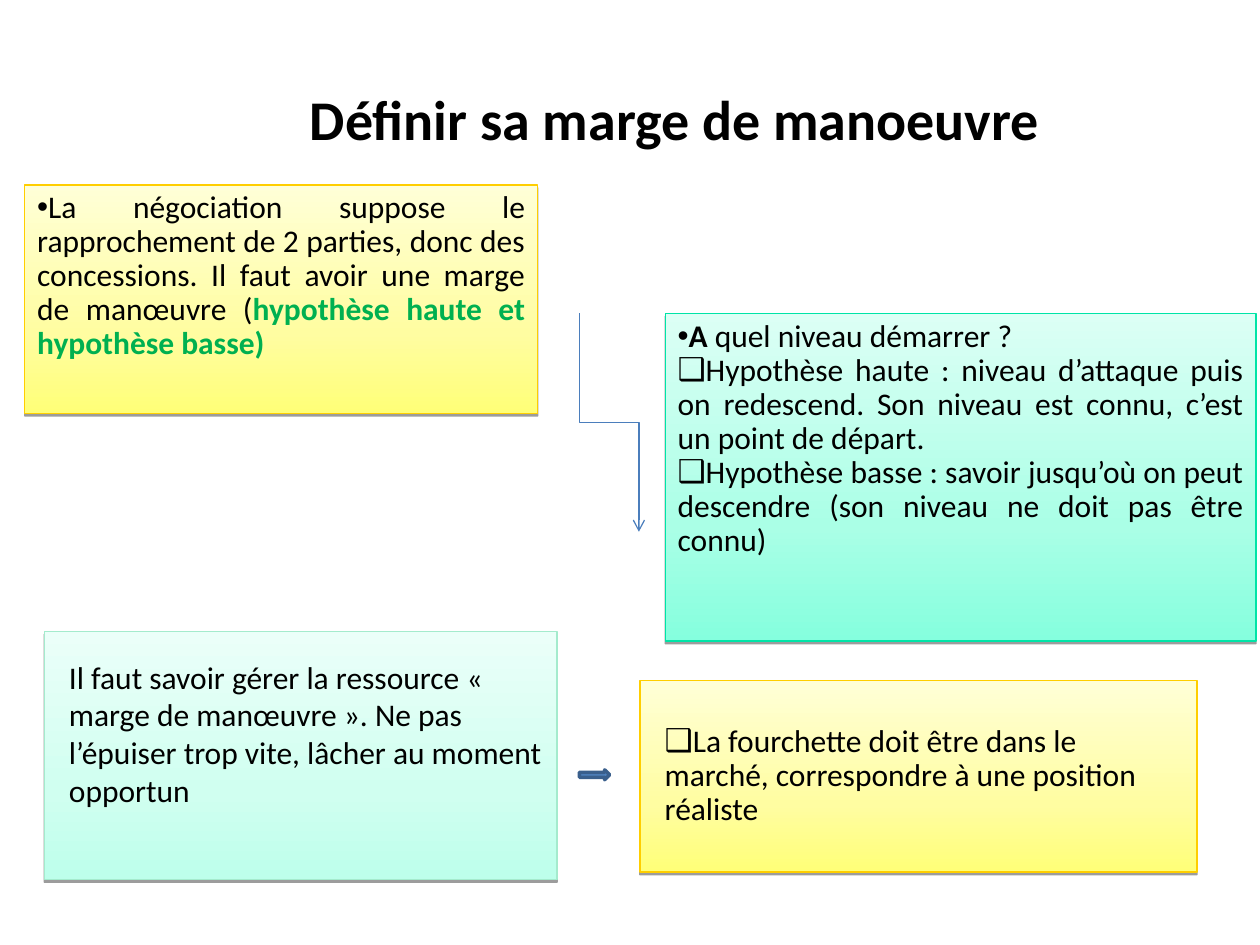
import pptx
import pptx.util
import pptx.dml.color
import pptx.enum.shapes
import pptx.enum.text
import pptx.oxml
import pptx.oxml.ns
from copy import deepcopy
from lxml import etree

Cm, Pt = pptx.util.Cm, pptx.util.Pt
RGB = pptx.dml.color.RGBColor
ALIGN = pptx.enum.text.PP_ALIGN
ANCHOR = pptx.enum.text.MSO_ANCHOR
SHAPE = pptx.enum.shapes.MSO_SHAPE
qn = pptx.oxml.ns.qn

BLACK = RGB(0x00, 0x00, 0x00)
GREEN = RGB(0x00, 0xB0, 0x50)
BLUE = RGB(0x4F, 0x81, 0xBD)
DARK_BLUE = RGB(0x3A, 0x5F, 0x8C)
LINE_BLUE = RGB(0x4B, 0x7E, 0xBC)

# Each theme: gradient from top to bottom, then outline
STOPS = (0, 0.65, 1)
YELLOW = ((RGB(0xFF, 0xFF, 0xD7), RGB(0xFF, 0xFD, 0xA1), RGB(0xFF, 0xFF, 0x78)),
          RGB(0xFF, 0xCE, 0x00))
MINT = ((RGB(0xEB, 0xFF, 0xF9), RGB(0xD0, 0xFF, 0xF0), RGB(0xBD, 0xFF, 0xEB)),
        RGB(0xA4, 0xEB, 0xCD))
AQUA = ((RGB(0xDC, 0xFF, 0xF5), RGB(0xAA, 0xFF, 0xE6), RGB(0x85, 0xFF, 0xDE)),
        RGB(0x00, 0xE4, 0xA7))
SHADOW = ('<a:effectLst xmlns:a="http://schemas.openxmlformats.org/drawingml/2006/main">'
          '<a:outerShdw blurRad="0" dist="20000" dir="5400000" rotWithShape="0">'
          '<a:srgbClr val="000000"><a:alpha val="38000"/></a:srgbClr>'
          '</a:outerShdw></a:effectLst>')


def apply(target, values):
    for name, value in values.items():
        setattr(target, name, value)


class Board:
    font = {"name": "Calibri", "size": Pt(18), "bold": False}

    def __init__(self, slide):
        self.slide = slide

    def place(self, shape, left, top, width, height):
        apply(shape, {"left": Cm(left), "top": Cm(top),
                      "width": Cm(width), "height": Cm(height)})

    def add_runs(self, paragraph, runs, **font):
        for text, changes in runs:
            run = paragraph.add_run()
            run.text = text
            values = {**self.font, **font, **changes}
            run.font.color.rgb = values.pop("color", BLACK)
            apply(run.font, values)

    def title(self, text, *box):
        title = self.slide.shapes.title
        self.place(title, *box)
        apply(title.text_frame, {"auto_size": pptx.enum.text.MSO_AUTO_SIZE.NONE,
                                 "vertical_anchor": ANCHOR.MIDDLE})
        paragraph = title.text_frame.paragraphs[0]
        paragraph.alignment = ALIGN.CENTER
        self.add_runs(paragraph, [(text, {})], size=Pt(32), bold=True)

    def panel(self, index, box, theme, paragraphs, spacing=0.9,
              align=ALIGN.LEFT, anchor=ANCHOR.TOP, indent=0.25, bottom=0.13):
        panel = self.slide.placeholders[index]
        self.place(panel, *box)
        colors, outline = theme

        # Gradient, outline and shadow
        panel.fill.gradient()
        panel.fill.gradient_angle = 270
        first = panel._element.spPr.find(".//" + qn("a:gs"))
        first.addnext(deepcopy(first))
        for stop, position, color in zip(panel.fill.gradient_stops, STOPS, colors):
            stop.position = position
            stop.color.rgb = color
        panel.line.color.rgb = outline
        panel.line.width = Pt(0.75)
        panel._element.spPr.append(pptx.oxml.parse_xml(SHADOW))

        # Text
        frame = panel.text_frame
        apply(frame, {"word_wrap": True, "vertical_anchor": anchor,
                      "auto_size": pptx.enum.text.MSO_AUTO_SIZE.NONE,
                      "margin_left": Cm(indent), "margin_right": Cm(0.25),
                      "margin_top": Cm(0.13), "margin_bottom": Cm(bottom)})
        for number, (bullet, runs) in enumerate(paragraphs):
            paragraph = frame.add_paragraph() if number else frame.paragraphs[0]
            apply(paragraph, {"alignment": align, "line_spacing": spacing,
                              "space_before": Pt(0)})
            properties = paragraph._p.get_or_add_pPr()
            properties.set("marL", "0")
            properties.set("indent", "0")
            if bullet:
                etree.SubElement(properties, qn("a:buFont")).set("typeface", "Arial")
                etree.SubElement(properties, qn("a:buChar")).set("char", bullet)
            else:
                etree.SubElement(properties, qn("a:buNone"))
            self.add_runs(paragraph, runs)

    def elbow(self, left, top, width, height):
        """Bent arrow that leaves downwards: drawn lying, then turned upright."""
        x, y = left + (width - height) / 2, top + (height - width) / 2
        elbow = self.slide.shapes.add_connector(
            pptx.enum.shapes.MSO_CONNECTOR.ELBOW,
            Cm(x + height), Cm(y), Cm(x), Cm(y + width))
        elbow.line.color.rgb = LINE_BLUE
        elbow.line.width = Pt(0.75)
        properties = elbow._element.spPr
        properties.find(qn("a:xfrm")).set("rot", "16200000")
        etree.SubElement(properties.find(qn("a:ln")), qn("a:tailEnd")).set("type", "arrow")
        etree.SubElement(properties, qn("a:effectLst"))

    def block_arrow(self, *box):
        arrow = self.slide.shapes.add_shape(SHAPE.RIGHT_ARROW, *map(Cm, box))
        arrow.shadow.inherit = False
        arrow.fill.solid()
        arrow.fill.fore_color.rgb = BLUE
        arrow.line.color.rgb = DARK_BLUE
        arrow.line.width = Pt(2)


def main():
    deck = pptx.Presentation()
    deck.slide_width, deck.slide_height = Cm(25.4), Cm(19.05)
    board = Board(deck.slides.add_slide(deck.slide_layouts[4]))

    board.title("Définir sa marge de manoeuvre", 3.58, 1.57, 20.04, 1.63)

    # Upper row: principle, then starting level
    board.panel(1, (0.5, 3.73, 10.34, 4.6), YELLOW, [
        ("•", [("La négociation suppose le rapprochement de 2 parties, donc des "
                "concessions. Il faut avoir une marge de manœuvre (", {}),
               ("hypothèse haute et hypothèse basse)", {"bold": True, "color": GREEN})]),
    ], align=ALIGN.JUSTIFY)
    board.panel(2, (13.41, 6.32, 11.91, 6.6), AQUA, [
        ("•", [("A ", {"bold": True}), ("quel niveau démarrer ?", {})]),
        ("❑", [("Hypothèse haute : niveau d’attaque puis on redescend. Son niveau "
                "est connu, c’est un point de départ.", {})]),
        ("❑", [("Hypothèse basse : savoir jusqu’où on peut descendre (son niveau "
                "ne doit pas être connu)", {})]),
    ], align=ALIGN.JUSTIFY)

    # Lower row: managing the margin, then its range
    board.panel(3, (0.89, 12.73, 10.34, 5), MINT, [
        (None, [("Il faut savoir gérer la ressource « marge de manœuvre ». Ne pas "
                 "l’épuiser trop vite, lâcher au moment opportun", {})]),
    ], spacing=1.0, anchor=ANCHOR.MIDDLE, indent=0.5, bottom=1.03)
    board.panel(4, (12.9, 13.72, 11.23, 3.86), YELLOW, [
        ("❑", [("La fourchette doit être dans le marché, correspondre à une "
                "position réaliste", {})]),
    ], anchor=ANCHOR.MIDDLE, indent=0.5)

    # Arrows between the panels
    board.elbow(11.68, 6.32, 1.2, 4.4)
    board.block_arrow(11.68, 15.52, 0.61, 0.2)

    deck.save("out.pptx")


if __name__ == "__main__":
    main()
